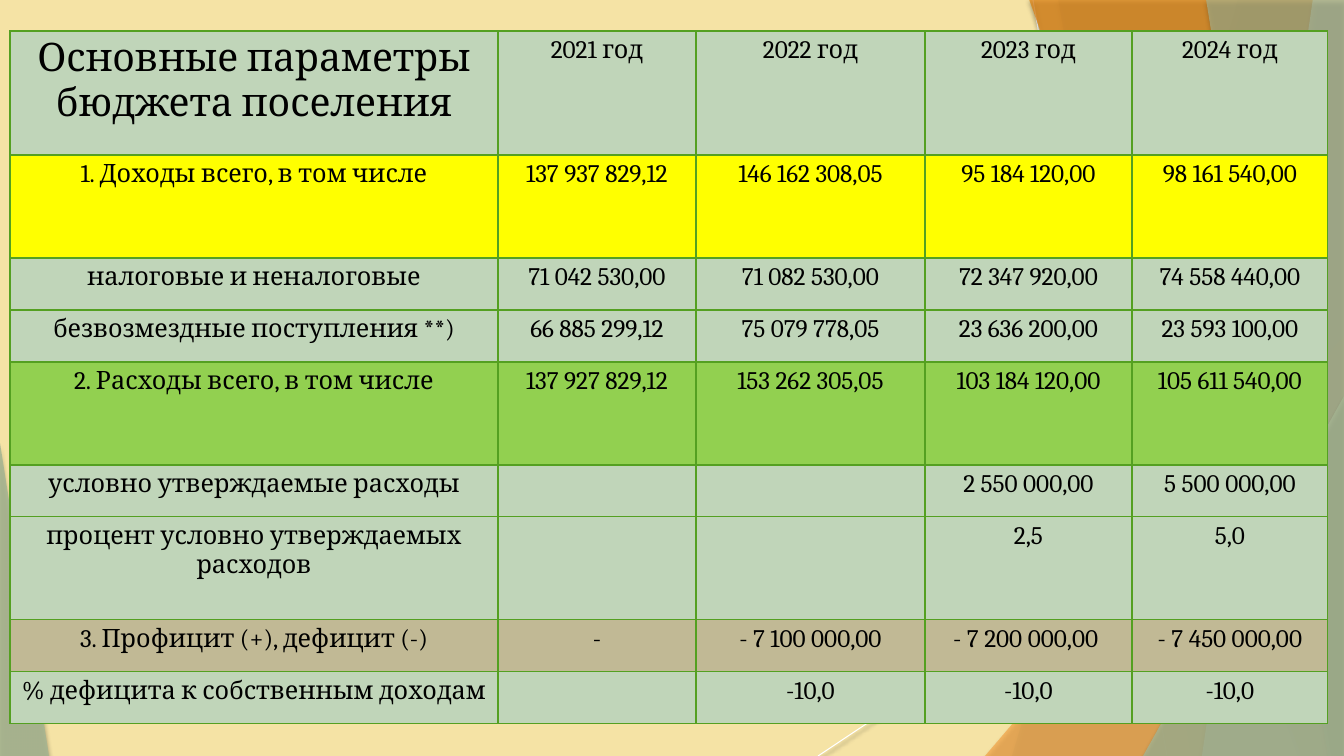
"""Build a slide with the main budget parameters of a settlement."""
from lxml import etree
from pptx import Presentation
from pptx.dml.color import RGBColor
from pptx.enum.shapes import MSO_CONNECTOR as Connector, MSO_SHAPE as Shape
from pptx.enum.text import PP_ALIGN as Align
from pptx.oxml import parse_xml
from pptx.oxml.ns import qn
from pptx.util import Pt

SCALE = 914400 / 100.8
WIDTH, HEIGHT = 1344, 756
FONT = "Cambria"
PALE, BORDER = "C0D5B9", "54A021"
TABLE_LEFT, TABLE_TOP = 10, 31
COLUMNS = [488, 198, 229, 207, 196]
ROWS = [
    (124, PALE, ["Основные параметры бюджета поселения",
                 "2021 год", "2022 год", "2023 год", "2024 год"]),
    (103, "FFFF00", ["1. Доходы всего, в том числе", "137 937 829,12",
                     "146 162 308,05", "95 184 120,00", "98 161 540,00"]),
    (52, PALE, ["налоговые и неналоговые", "71 042 530,00",
                "71 082 530,00", "72 347 920,00", "74 558 440,00"]),
    (52, PALE, ["безвозмездные поступления **)", "66 885 299,12",
                "75 079 778,05", "23 636 200,00", "23 593 100,00"]),
    (103, "92D050", ["2. Расходы всего, в том числе", "137 927 829,12",
                     "153 262 305,05", "103 184 120,00", "105 611 540,00"]),
    (52, PALE, ["условно утверждаемые расходы", "", "",
                "2 550 000,00", "5 500 000,00"]),
    (103, PALE, ["процент условно утверждаемых расходов", "", "", "2,5", "5,0"]),
    (52, "C1B995", ["3. Профицит (+), дефицит (-)", "-", "- 7 100 000,00",
                    "- 7 200 000,00 ", "- 7 450 000,00"]),
    (52, PALE, ["% дефицита к собственным доходам", "", "-10,0", "-10,0", "-10,0"]),
]
RAYS = [(1033, 0, 1167, HEIGHT), (WIDTH, 406, 818, HEIGHT)]
FACETS = [
    ("band", (1238, 1012), "A5B592", 30),
    ("band", (1058, 1191), "A5B592", 20),
    ("triangle", (985, 336, 359, 420, 1), "F3A447", 72),
    ("band", (1029, 1301), "DD7E0E", 70),
    ("band", (1313, 1202), "C9D3BE", 70),
    ("band", (1206, 1328), "A5B592", 65),
    ("triangle", (1143, 396, 201, 360, 1), "A5B592", 80),
    ("triangle", (0, 443, 49, 313, 0), "A5B592", 85),
]
DRAWING = "http://schemas.openxmlformats.org/drawingml/2006/main"


def px(length):
    return round(length * SCALE)


def color(value):
    return RGBColor.from_string(value)


def add_shadow(shape, alpha, blur, distance):
    shape._element.spPr.append(parse_xml(
        f'<a:effectLst xmlns:a="{DRAWING}"><a:outerShdw blurRad="{Pt(blur)}" '
        f'dist="{Pt(distance)}" dir="5400000" rotWithShape="0"><a:srgbClr val="000000">'
        f'<a:alpha val="{alpha * 1000}"/></a:srgbClr></a:outerShdw></a:effectLst>'))


def add_ray(slide, ends):
    ray = slide.shapes.add_connector(Connector.STRAIGHT, *map(px, ends))
    ray.line.color.rgb = color("FFFFFF")
    ray.line.width = Pt(0.75)
    add_shadow(ray, 38, 3.1, 1.6)


def add_facet(slide, kind, geometry, fill, opacity):
    if kind == "band":
        top_x, bottom_x = geometry
        builder = slide.shapes.build_freeform(top_x, -1, scale=SCALE)
        builder.add_line_segments([(WIDTH, -1), (WIDTH, HEIGHT), (bottom_x, HEIGHT)])
        facet = builder.convert_to_shape()
    else:
        *bounds, apex = geometry
        facet = slide.shapes.add_shape(Shape.ISOSCELES_TRIANGLE, *map(px, bounds))
        facet.adjustments[0] = apex
    facet.fill.solid()
    facet.fill.fore_color.rgb = color(fill)
    tint = facet._element.spPr.find(qn("a:solidFill"))[0]
    etree.SubElement(tint, qn("a:alpha"), val=str(opacity * 1000))
    facet.line.fill.background()
    add_shadow(facet, 35, 3, 2)


def write(frame, text, size=18, ink="000000", align=Align.CENTER):
    para = frame.paragraphs[0]
    para.alignment = align
    para.font.size = Pt(size)
    if text:
        span = para.add_run()
        span.text = text
        span.font.size = Pt(size)
        span.font.name = FONT
        span.font.color.rgb = color(ink)


def format_cell(cell, fill):
    cell.margin_left = cell.margin_right = px(7)
    cell.margin_top = cell.margin_bottom = px(5)
    properties = cell._tc.get_or_add_tcPr()
    for side in "LRTB":
        edge = etree.SubElement(properties, qn(f"a:ln{side}"), w=str(Pt(0.96)))
        paint = etree.SubElement(edge, qn("a:solidFill"))
        etree.SubElement(paint, qn("a:srgbClr"), val=BORDER)
    cell.fill.solid()
    cell.fill.fore_color.rgb = color(fill)


def add_budget(slide):
    heights = [height for height, _, _ in ROWS]
    bounds = TABLE_LEFT, TABLE_TOP, sum(COLUMNS), sum(heights)
    table = slide.shapes.add_table(len(ROWS), len(COLUMNS), *map(px, bounds)).table
    table.first_row = table.horz_banding = False
    for column, width in zip(table.columns, COLUMNS):
        column.width = px(width)
    for row_index, (height, fill, texts) in enumerate(ROWS):
        table.rows[row_index].height = px(height)
        for column_index, text in enumerate(texts):
            cell = table.cell(row_index, column_index)
            format_cell(cell, fill)
            is_title = row_index == column_index == 0
            write(cell.text_frame, text, size=28 if is_title else 18)


def main():
    deck = Presentation()
    deck.slide_width, deck.slide_height = px(WIDTH), px(HEIGHT)
    slide = deck.slides.add_slide(deck.slide_layouts[6])
    slide.background.fill.solid()
    slide.background.fill.fore_color.rgb = color("F5E3A5")
    for ends in RAYS:
        add_ray(slide, ends)
    for facet in FACETS:
        add_facet(slide, *facet)
    add_budget(slide)
    deck.save("out.pptx")


if __name__ == "__main__":
    main()
